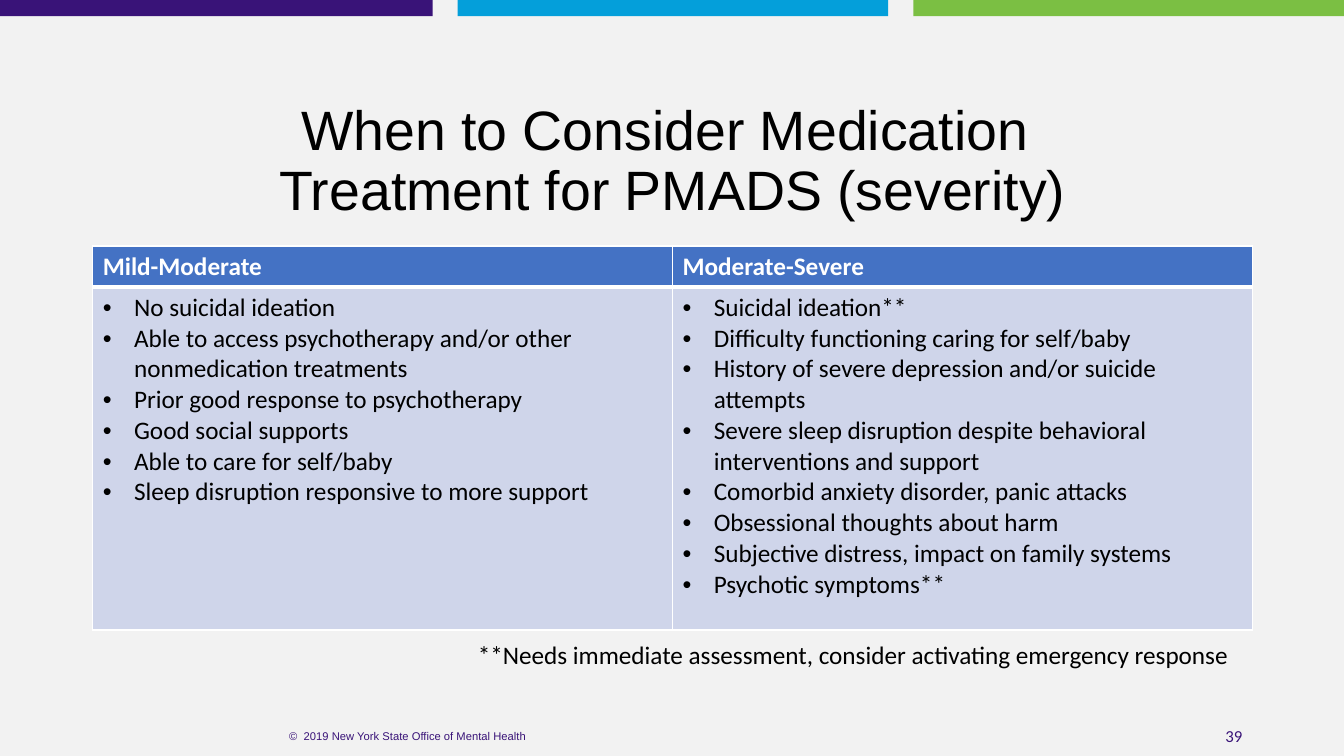
from dataclasses import dataclass

from lxml import etree
from pptx import Presentation
from pptx.dml.color import RGBColor
from pptx.enum.shapes import MSO_SHAPE
from pptx.enum.text import MSO_ANCHOR, PP_ALIGN
from pptx.oxml.ns import qn
from pptx.util import Inches, Pt

RECT = MSO_SHAPE.RECTANGLE
TOP, MIDDLE = MSO_ANCHOR.TOP, MSO_ANCHOR.MIDDLE
LEFT, CENTER, RIGHT = PP_ALIGN.LEFT, PP_ALIGN.CENTER, PP_ALIGN.RIGHT

BLACK = RGBColor(0x00, 0x00, 0x00)
WHITE = RGBColor(0xFF, 0xFF, 0xFF)
GRAY = RGBColor(0xF2, 0xF2, 0xF2)
PURPLE = RGBColor(0x39, 0x13, 0x78)
CYAN = RGBColor(0x04, 0x9F, 0xDA)
GREEN = RGBColor(0x7B, 0xBF, 0x43)
BLUE = RGBColor(0x44, 0x72, 0xC4)
PALE = RGBColor(0xCF, 0xD5, 0xEA)


@dataclass
class Bar:
    left: float
    width: float
    height: float
    color: RGBColor


@dataclass
class Label:
    text: str
    box: tuple[float, float, float, float]
    size: float
    font: str = "Calibri"
    color: RGBColor = BLACK
    align: PP_ALIGN = LEFT
    anchor: MSO_ANCHOR = MIDDLE
    space: float = 1.0


@dataclass
class Column:
    head: str
    items: list[str]


BARS = [
    Bar(0, 13.33, 7.5, GRAY),
    Bar(0, 4.29, 0.16, PURPLE),
    Bar(4.54, 4.27, 0.16, CYAN),
    Bar(9.06, 4.27, 0.16, GREEN),
]

LABELS = [
    Label("39", (9.42, 7.1, 3, 0.4), 12, color=PURPLE, align=RIGHT),
    Label("©  2019 New York State Office of Mental Health",
          (1.81, 7.1, 4.47, 0.4), 8, "Arial", PURPLE, CENTER),
    Label("When to Consider Medication \vTreatment for PMADS (severity)",
          (0.92, 1.22, 11.5, 0.78), 39.6, "Arial", align=CENTER, space=0.9),
    Label("**Needs immediate assessment, consider activating emergency response",
          (4.64, 6.29, 7.78, 0.4), 18, anchor=TOP),
]

COLUMNS = [
    Column("Mild-Moderate", [
        "No suicidal ideation",
        "Able to access psychotherapy and/or other nonmedication treatments",
        "Prior good response to psychotherapy",
        "Good social supports",
        "Able to care for self/baby",
        "Sleep disruption responsive to more support",
    ]),
    Column("Moderate-Severe", [
        "Suicidal ideation**",
        "Difficulty functioning caring for self/baby",
        "History of severe depression and/or suicide attempts",
        "Severe sleep disruption despite behavioral interventions and support",
        "Comorbid anxiety disorder, panic attacks",
        "Obsessional thoughts about harm",
        "Subjective distress, impact on family systems",
        "Psychotic symptoms**",
    ]),
]


def add_bullet(para) -> None:
    props = para._p.get_or_add_pPr()
    props.set("marL", str(Inches(0.31)))
    props.set("indent", str(-Inches(0.31)))
    etree.SubElement(props, qn("a:buFont"), typeface="Arial")
    etree.SubElement(props, qn("a:buChar"), char="•")


def write(para, text: str, *, size: float = 18, font: str = "Calibri",
          color: RGBColor = BLACK, bold: bool = False, align: PP_ALIGN = LEFT,
          space: float = 1.0, bullet: bool = False) -> None:
    para.text = text
    para.alignment = align
    para.line_spacing = space
    if bullet:
        add_bullet(para)
    for run in para.runs:
        run.font.size = Pt(size)
        run.font.name = font
        run.font.bold = bold
        run.font.color.rgb = color


def draw_bar(slide, bar: Bar) -> None:
    shape = slide.shapes.add_shape(
        RECT, Inches(bar.left), 0, Inches(bar.width), Inches(bar.height))
    shape.shadow.inherit = False
    shape.fill.solid()
    shape.fill.fore_color.rgb = bar.color
    shape.line.fill.background()


def draw_label(slide, label: Label) -> None:
    box = slide.shapes.add_textbox(*map(Inches, label.box))
    frame = box.text_frame
    frame.word_wrap = True
    frame.vertical_anchor = label.anchor
    write(frame.paragraphs[0], label.text, size=label.size, font=label.font,
          color=label.color, align=label.align, space=label.space)


def style_cell(cell, color: RGBColor, top: float, base: float) -> None:
    props = cell._tc.get_or_add_tcPr()
    for side, width in (("L", 1), ("R", 1), ("T", top), ("B", base)):
        line = etree.SubElement(props, qn(f"a:ln{side}"), w=str(Pt(width)))
        fill = etree.SubElement(line, qn("a:solidFill"))
        etree.SubElement(fill, qn("a:srgbClr"), val=str(WHITE))
    cell.fill.solid()
    cell.fill.fore_color.rgb = color


def draw_table(slide, columns: list[Column]) -> None:
    table = slide.shapes.add_table(
        2, len(columns), Inches(0.92), Inches(2.44), Inches(11.5), Inches(3.81)).table
    table.horz_banding = False
    table.rows[0].height = Inches(0.41)
    table.rows[1].height = Inches(3.4)
    for index, column in enumerate(columns):
        head, body = table.cell(0, index), table.cell(1, index)
        style_cell(head, BLUE, 1, 3)
        style_cell(body, PALE, 3, 1)
        write(head.text_frame.paragraphs[0], column.head, color=WHITE, bold=True)
        frame = body.text_frame
        for order, item in enumerate(column.items):
            para = frame.add_paragraph() if order else frame.paragraphs[0]
            write(para, item, bullet=True)


def main() -> None:
    deck = Presentation()
    deck.slide_width = Inches(13.33)
    deck.slide_height = Inches(7.5)
    slide = deck.slides.add_slide(deck.slide_layouts[6])
    for bar in BARS:
        draw_bar(slide, bar)
    for label in LABELS:
        draw_label(slide, label)
    draw_table(slide, COLUMNS)
    deck.save("out.pptx")


if __name__ == "__main__":
    main()
